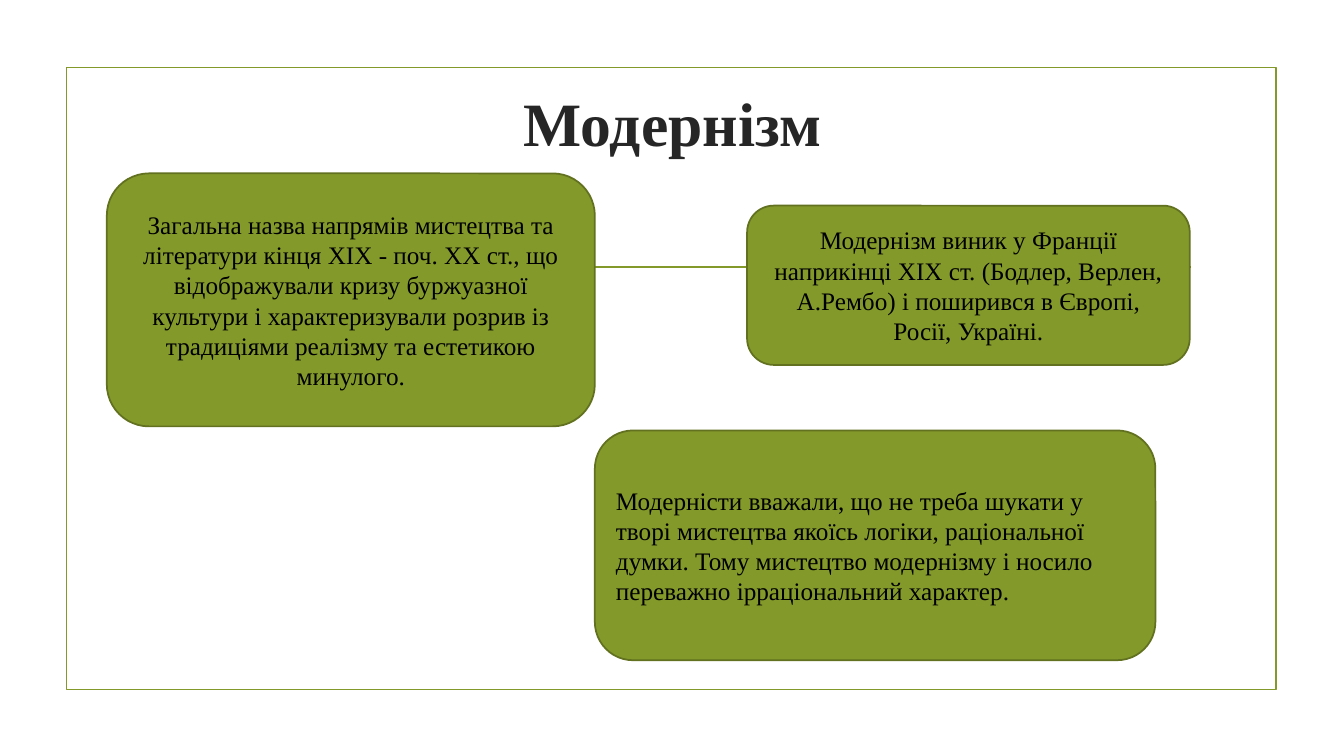
"""Build the slide about modernism with three rounded text cards."""
import pptx
import pptx.dml.color
import pptx.enum.shapes
import pptx.enum.text
import pptx.oxml
import pptx.util
from pptx.util import Inches

COLORS = {"green": "83992A", "edge": "61711F", "title": "262626", "text": "000000"}
FONT = "Times New Roman"
SHAPE = pptx.enum.shapes.MSO_SHAPE
ALIGN = pptx.enum.text.PP_ALIGN


def set_line(line, color):
    line.color.rgb = pptx.dml.color.RGBColor.from_string(COLORS[color])
    line.width = pptx.util.Pt(1.25)


def write(sp, text, size, color, align, bold=False):
    tf = sp.text_frame
    tf.word_wrap = True
    tf.vertical_anchor = pptx.enum.text.MSO_ANCHOR.MIDDLE
    p = tf.paragraphs[0]
    p.text = text
    p.alignment = align
    p.font.name = FONT
    p.font.size = pptx.util.Pt(size)
    p.font.bold = bold
    p.font.color.rgb = pptx.dml.color.RGBColor.from_string(COLORS[color])


prs = pptx.Presentation()
prs.slide_width = Inches(13.33)
prs.slide_height = Inches(7.5)
s = prs.slides.add_slide(prs.slide_layouts[6])

frame = s.shapes.add_shape(SHAPE.RECTANGLE, Inches(0.66), Inches(0.67), Inches(12), Inches(6.17))
frame.shadow.inherit = False
frame.fill.background()
set_line(frame.line, "green")

rule = s.shapes.add_connector(
    pptx.enum.shapes.MSO_CONNECTOR.STRAIGHT,
    Inches(1.53), Inches(2.65), Inches(11.81), Inches(2.65))
set_line(rule.line, "green")
rule._element.spPr.append(pptx.oxml.parse_xml(
    '<a:effectLst xmlns:a="http://schemas.openxmlformats.org/drawingml/2006/main"/>'))

title = s.shapes.add_textbox(Inches(1.42), Inches(0.7), Inches(10.5), Inches(1.01))
write(title, "Модернізм", 44, "title", ALIGN.CENTER, bold=True)

cards = [
    (1.06, 1.72, 4.84, 2.51, ALIGN.CENTER,
     "Загальна назва напрямів мистецтва та літератури кінця XIX - поч. XX ст., що "
     "відображували кризу буржуазної культури і характеризували розрив із традиціями "
     "реалізму та естетикою минулого."),
    (7.41, 2.04, 4.39, 1.58, ALIGN.CENTER,
     "Модернізм виник у Франції наприкінці XIX ст. (Бодлер, Верлен, А.Рембо) і "
     "поширився в Європі, Росії, Україні."),
    (5.9, 4.27, 5.56, 2.28, ALIGN.LEFT,
     "Модерністи вважали, що не треба шукати у творі мистецтва якоїсь логіки, "
     "раціональної думки. Тому мистецтво модернізму і носило переважно "
     "ірраціональний характер."),
]
for left, top, width, height, align, text in cards:
    sp = s.shapes.add_shape(
        SHAPE.ROUNDED_RECTANGLE, Inches(left), Inches(top), Inches(width), Inches(height))
    sp.shadow.inherit = False
    sp.fill.solid()
    sp.fill.fore_color.rgb = pptx.dml.color.RGBColor.from_string(COLORS["green"])
    set_line(sp.line, "edge")
    write(sp, text, 18, "text", align)

prs.save("out.pptx")
